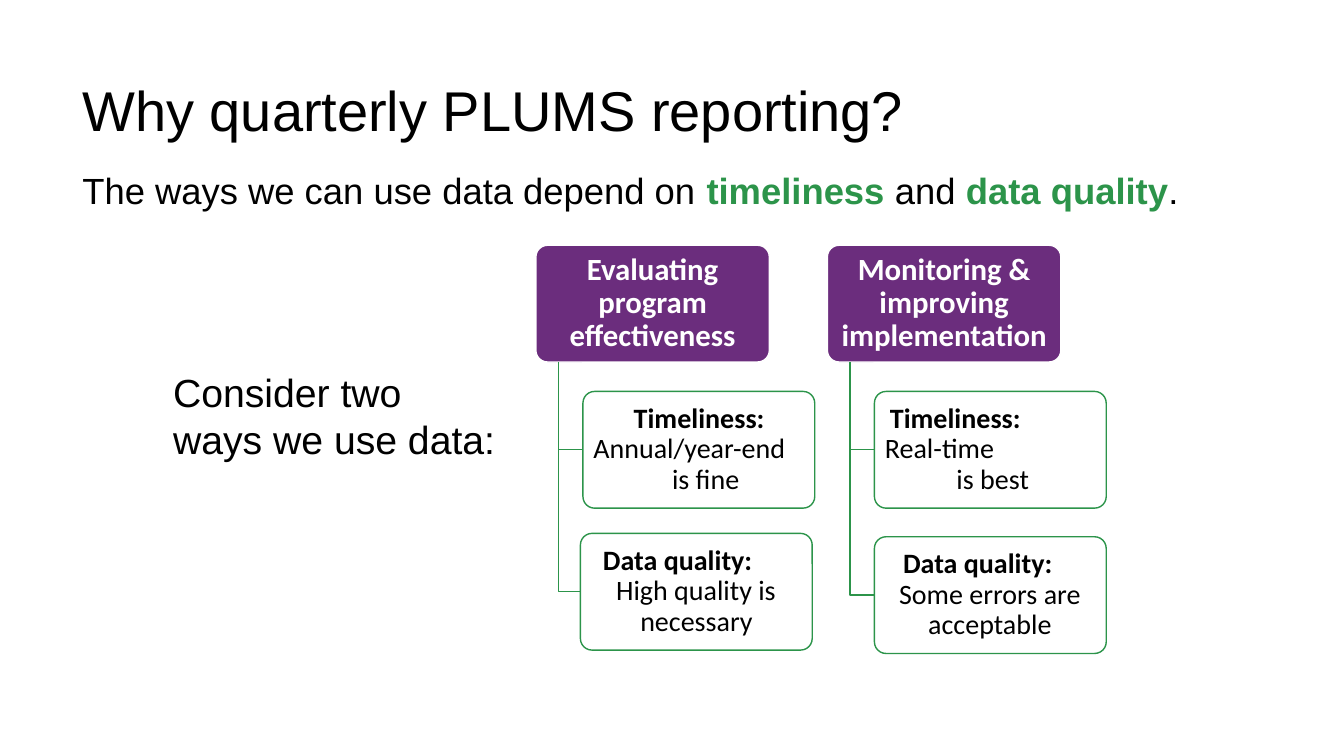
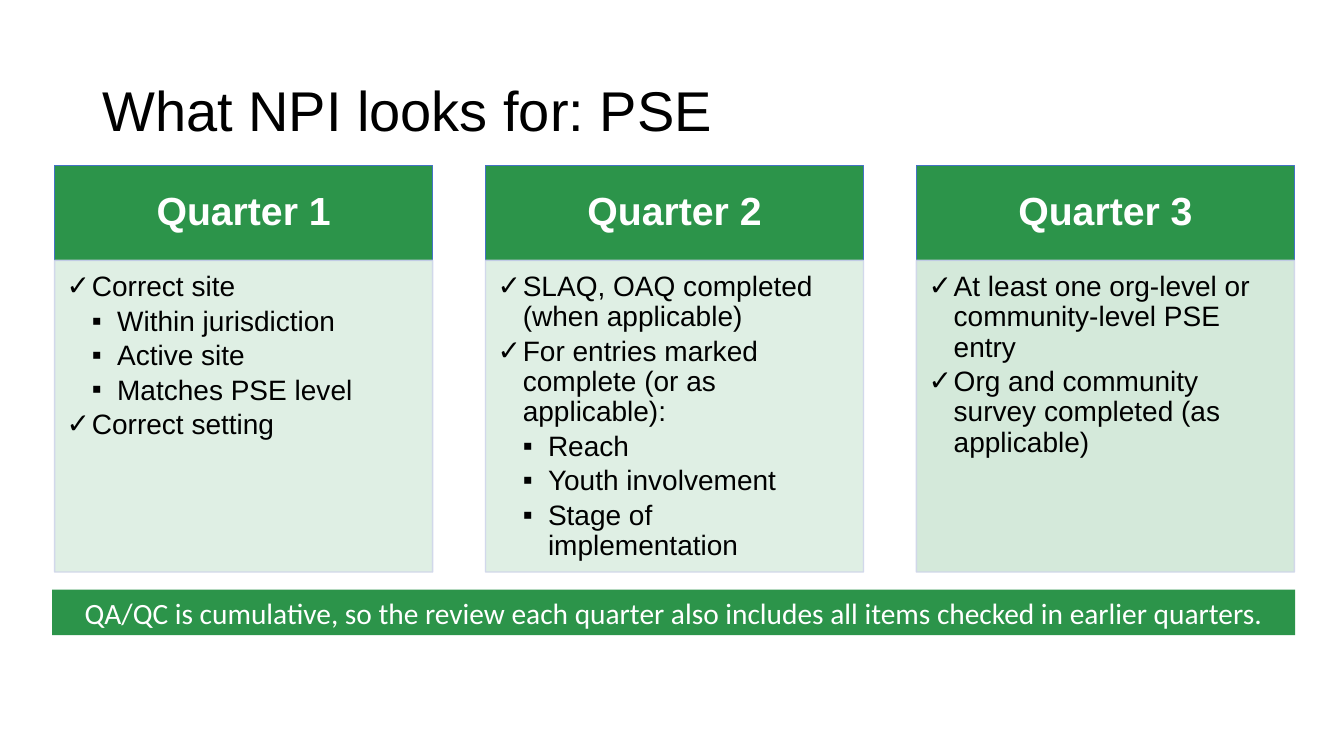
from dataclasses import dataclass
from typing import Optional

from lxml import etree
from pptx import Presentation
from pptx.dml.color import RGBColor
from pptx.enum.shapes import MSO_SHAPE
from pptx.enum.text import MSO_ANCHOR, MSO_AUTO_SIZE, PP_ALIGN
from pptx.oxml.ns import qn
from pptx.shapes.autoshape import Shape
from pptx.slide import Slide
from pptx.text.text import TextFrame
from pptx.util import Emu, Inches, Pt

RECT, ROUND = MSO_SHAPE.RECTANGLE, MSO_SHAPE.ROUNDED_RECTANGLE
LEFT, CENTER = PP_ALIGN.LEFT, PP_ALIGN.CENTER
TOP, MIDDLE = MSO_ANCHOR.TOP, MSO_ANCHOR.MIDDLE
TITLE_AND_CONTENT, TITLE_ONLY = 1, 5

# The slide is a grid of 16 columns by 9 rows of square cells
COLS, ROWS = 16, 9
CELL = Inches(7.5) / ROWS


@dataclass(frozen=True)
class Theme:
    green: str = "2C944A"
    purple: str = "6B2D7D"
    blue: str = "4472C4"
    pale_blue: str = "CFD5EA"
    white: str = "FFFFFF"
    black: str = "000000"
    sans: str = "Arial"
    label: str = "Calibri"
    title: int = 40
    heading: int = 28
    lead: int = 26
    group: int = 22
    banner: int = 21
    text: int = 20


THEME = Theme()


@dataclass(frozen=True)
class Box:
    """Position and size in grid cells."""
    col: float
    row: float
    cols: float
    rows: float

    def emu(self) -> tuple[Emu, ...]:
        return tuple(cells(n) for n in (self.col, self.row, self.cols, self.rows))


@dataclass(frozen=True)
class Need:
    """A child box: shift from its header, row, and lines with indents in inches."""
    shift: float
    row: float
    lines: tuple[tuple[str, float], ...]


@dataclass(frozen=True)
class Use:
    name: str
    needs: tuple[Need, ...]


@dataclass(frozen=True)
class Quarter:
    name: str
    tint: int
    items: tuple[tuple[int, str], ...]


USES = (
    Use("Evaluating program effectiveness", (
        Need(0.56, 4.66, (("Timeliness:", 0.43), ("Annual/year-end", 0.03), ("is fine", 0.81))),
        Need(0.53, 6.35, (("Data quality:", 0.15), ("High quality is", 0.28), ("necessary", 0.52))),
    )),
    Use("Monitoring & improving implementation", (
        Need(0.56, 4.66, (("Timeliness:", 0.08), ("Real-time", 0.03), ("is best", 0.74))),
        Need(0.56, 6.39, (("Data quality:", 0.21), ("Some errors are", 0.17), ("acceptable", 0.46))),
    )),
)

QUARTERS = (
    Quarter("Quarter 1", 15, (
        (0, "Correct site"), (1, "Within jurisdiction"), (1, "Active site"),
        (1, "Matches PSE level"), (0, "Correct setting"))),
    Quarter("Quarter 2", 15, (
        (0, "SLAQ, OAQ completed (when applicable)"),
        (0, "For entries marked complete (or as applicable):"),
        (1, "Reach"), (1, "Youth involvement"), (1, "Stage of implementation"))),
    Quarter("Quarter 3", 20, (
        (0, "At least one org-level or community-level PSE entry"),
        (0, "Org and community survey completed (as applicable)"))),
)
BULLETS = ("✓", "▪")


def cells(n: float) -> Emu:
    return Emu(round(n * CELL))


def rgb(color: str) -> RGBColor:
    return RGBColor.from_string(color)


def add_text(tf: TextFrame, text: str | list[tuple[str, str, bool]], *, size: int,
             font: str = THEME.sans, color: str = THEME.black, bold: bool = False,
             align: PP_ALIGN = LEFT, spacing: float = 0.9, before: float = 0,
             after: float = 0, level: int = 0, indent: float = 0, hanging: float = 0,
             bullet: Optional[str] = None) -> None:
    """Add one paragraph; text is a string or a list of (text, color, bold)."""
    p = tf.paragraphs[0]
    if p.runs:
        p = tf.add_paragraph()
    p.level = level
    pPr = p._p.get_or_add_pPr()
    pPr.set("marL", str(Inches(indent)))
    pPr.set("indent", str(Inches(-hanging)))
    if bullet:
        etree.SubElement(pPr, qn("a:buFont")).set("typeface", font)
        etree.SubElement(pPr, qn("a:buChar")).set("char", bullet)
    else:
        etree.SubElement(pPr, qn("a:buNone"))
    p.alignment, p.line_spacing = align, spacing
    p.space_before, p.space_after = Pt(before), Pt(after)
    for words, tone, strong in [(text, color, bold)] if isinstance(text, str) else text:
        r = p.add_run()
        r.text = words
        r.font.name, r.font.size, r.font.bold = font, Pt(size), strong
        r.font.color.rgb = rgb(tone)


def set_alpha(s: Shape, xpath: str, percent: int) -> None:
    color = s.element.spPr.find(f"{xpath}/{qn('a:srgbClr')}")
    etree.SubElement(color, qn("a:alpha")).set("val", str(percent * 1000))


def add_box(slide: Slide, kind: MSO_SHAPE, box: Box, fill: str, *,
            line: Optional[str] = None, fill_alpha: int = 100, line_alpha: int = 100,
            insets: tuple[float, ...] = (0.1, 0.05, 0.1, 0.05),
            anchor: MSO_ANCHOR = MIDDLE) -> Shape:
    s = slide.shapes.add_shape(kind, *box.emu())
    s.shadow.inherit = False
    if kind == ROUND:
        s.adjustments[0] = 0.1
    s.fill.solid()
    s.fill.fore_color.rgb = rgb(fill)
    if fill_alpha < 100:
        set_alpha(s, qn("a:solidFill"), fill_alpha)
    if line:
        s.line.color.rgb = rgb(line)
        s.line.width = Pt(1)
        if line_alpha < 100:
            set_alpha(s, f"{qn('a:ln')}/{qn('a:solidFill')}", line_alpha)
    else:
        s.line.fill.background()
    tf = s.text_frame
    tf.word_wrap, tf.vertical_anchor = True, anchor
    tf.margin_left, tf.margin_top, tf.margin_right, tf.margin_bottom = map(Inches, insets)
    return s


def add_elbow(slide: Slide, col: float, top: float, row: float, end: float) -> None:
    """Draw a line down from a header and across to a child box."""
    path = slide.shapes.build_freeform(cells(col), cells(top))
    path.add_line_segments([(cells(col), cells(row)), (cells(end), cells(row))], close=False)
    s = path.convert_to_shape()
    s.shadow.inherit = False
    s.fill.background()
    s.line.color.rgb = rgb(THEME.green)
    s.line.width = Pt(1)


def place(s: Shape, box: Box, anchor: MSO_ANCHOR) -> TextFrame:
    s.left, s.top, s.width, s.height = box.emu()
    tf = s.text_frame
    tf.word_wrap, tf.auto_size, tf.vertical_anchor = True, MSO_AUTO_SIZE.NONE, anchor
    return tf


def new_slide(prs: Presentation, layout: int, title: str, col: float) -> Slide:
    slide = prs.slides.add_slide(prs.slide_layouts[layout])
    tf = place(slide.shapes.title, Box(col, 0.48, 14.9 - col, 1.74), MIDDLE)
    add_text(tf, title, size=THEME.title)
    return slide


def add_use(slide: Slide, use: Use, col: float) -> None:
    """Draw a header with its child boxes hanging below."""
    top, height = 2.92, 1.39
    s = add_box(slide, ROUND, Box(col, top, 2.78, height), THEME.purple,
                line=THEME.white, insets=(0.05, 0.03, 0.05, 0.03))
    add_text(s.text_frame, use.name, size=THEME.group, font=THEME.label,
             color=THEME.white, bold=True, align=CENTER)
    for need in use.needs:
        left = col + need.shift
        add_elbow(slide, col + 0.27, top + height, need.row + height / 2, left)
        s = add_box(slide, ROUND, Box(left, need.row, 2.76, height), THEME.white,
                    line=THEME.green, fill_alpha=90, insets=(0.04, 0.03, 0.04, 0.03))
        for i, (line, indent) in enumerate(need.lines):
            add_text(s.text_frame, line, size=THEME.text, font=THEME.label,
                     bold=i == 0, indent=indent)


def add_quarter(slide: Slide, quarter: Quarter, col: float, width: float) -> None:
    """Draw a heading band over a tinted checklist."""
    top, band = 1.97, 1.13
    s = add_box(slide, RECT, Box(col, top, width, band), THEME.green,
                line=THEME.blue, insets=(0.22, 0.12, 0.22, 0.12))
    add_text(s.text_frame, quarter.name, size=THEME.heading, color=THEME.white,
             bold=True, align=CENTER)
    s = add_box(slide, RECT, Box(col, top + band, width, 3.71), THEME.green,
                line=THEME.pale_blue, fill_alpha=quarter.tint, line_alpha=90,
                insets=(0.12, 0.12, 0.16, 0.17), anchor=TOP)
    for level, item in quarter.items:
        add_text(s.text_frame, item, size=THEME.text, after=3, level=level,
                 indent=0.25 * (level + 1), hanging=0.25, bullet=BULLETS[level])


def build_reporting(prs: Presentation) -> None:
    slide = new_slide(prs, TITLE_AND_CONTENT, "Why quarterly PLUMS reporting?", 0.86)
    tf = place(slide.placeholders[1], Box(0.86, 2, 14.28, 6.1), TOP)
    add_text(tf, [("The ways we can use data depend on ", THEME.black, False),
                  ("timeliness", THEME.green, True), (" and ", THEME.black, False),
                  ("data quality", THEME.green, True), (".", THEME.black, False)],
             size=THEME.lead)
    for line, before in (("Consider two", 115), ("ways we use data:", 3.5)):
        add_text(tf, line, size=THEME.heading, before=before, level=1, indent=0.9)
    for i, use in enumerate(USES):
        add_use(slide, use, 6.38 + 3.47 * i)


def build_checks(prs: Presentation) -> None:
    slide = new_slide(prs, TITLE_ONLY, "What NPI looks for: PSE", 1.1)
    left, total, width = 0.65, 14.76, 4.5
    pitch = (total - width) / (len(QUARTERS) - 1)
    for i, quarter in enumerate(QUARTERS):
        add_quarter(slide, quarter, left + pitch * i, width)
    # Closing banner
    s = add_box(slide, RECT, Box(0.62, 7.02, 14.8, 0.54), THEME.green)
    add_text(s.text_frame, "QA/QC is cumulative, so the review each quarter also includes "
             "all items checked in earlier quarters.", size=THEME.banner,
             font=THEME.label, color=THEME.white, align=CENTER, spacing=1)


def main() -> None:
    prs = Presentation()
    prs.slide_width, prs.slide_height = cells(COLS), cells(ROWS)
    build_reporting(prs)
    build_checks(prs)
    prs.save("out.pptx")


if __name__ == "__main__":
    main()
